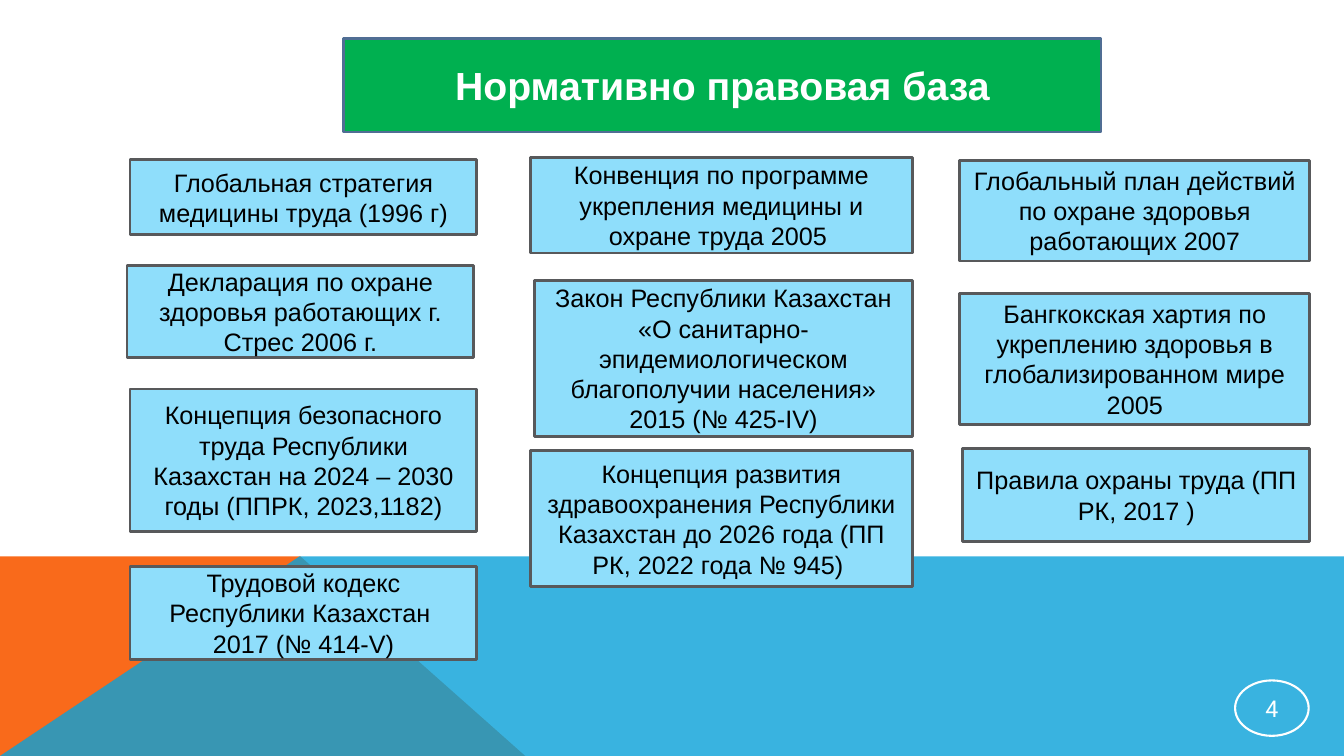
from pptx import Presentation
from pptx.dml.color import RGBColor
from pptx.enum.shapes import MSO_SHAPE
from pptx.enum.text import MSO_ANCHOR, PP_ALIGN
from pptx.oxml.ns import qn
from pptx.util import Inches, Pt
from lxml import etree

WHITE = RGBColor(0xFF, 0xFF, 0xFF)
BLACK = RGBColor(0x00, 0x00, 0x00)
ORANGE = RGBColor(0xF9, 0x6A, 0x1B)
BLUE = RGBColor(0x08, 0xA1, 0xD9)
GREEN = RGBColor(0x00, 0xB0, 0x50)
TITLE_LINE = RGBColor(0x50, 0x6E, 0x94)
PALE_BLUE = RGBColor(0x8F, 0xDE, 0xFB)
GREY = RGBColor(0x58, 0x59, 0x5B)

prs = Presentation()
prs.slide_width, prs.slide_height = Inches(13.33), Inches(7.5)
s = prs.slides.add_slide(prs.slide_layouts[6])


def add_band(points, color):
    (x, y), *rest = [(Inches(px), Inches(py)) for px, py in points]
    builder = s.shapes.build_freeform(x, y)
    builder.add_line_segments(rest, close=True)
    sp = builder.convert_to_shape()
    sp.shadow.inherit = False
    sp.fill.solid()
    sp.fill.fore_color.rgb = color
    sp.line.fill.background()
    return sp


def add_box(kind, box, lines, fill, line, width, size, color,
            font="Arial", bold=False, inset=(0.1, 0.05)):
    sp = s.shapes.add_shape(kind, *[Inches(v) for v in box])
    sp.shadow.inherit = False
    if fill is None:
        sp.fill.background()
    else:
        sp.fill.solid()
        sp.fill.fore_color.rgb = fill
    sp.line.color.rgb = line
    sp.line.width = Pt(width)
    tf = sp.text_frame
    tf.word_wrap = True
    tf.vertical_anchor = MSO_ANCHOR.MIDDLE
    tf.margin_left = tf.margin_right = Inches(inset[0])
    tf.margin_top = tf.margin_bottom = Inches(inset[1])
    tf.text = "\n".join(lines)
    for p in tf.paragraphs:
        p.alignment = PP_ALIGN.CENTER
        p.font.name, p.font.size, p.font.bold = font, Pt(size), bold
        p.font.color.rgb = color


# Bottom bands: the blue one lets the orange show through
add_band([(0, 7.5), (0, 5.52), (2.98, 5.52), (5.21, 7.5)], ORANGE)
blue = add_band([(0, 7.5), (2.97, 5.52), (13.33, 5.52), (13.33, 7.5)], BLUE)
rgb = blue._element.spPr.find(qn("a:solidFill")).find(qn("a:srgbClr"))
etree.SubElement(rgb, qn("a:alpha")).set("val", "80000")

# Title
add_box(MSO_SHAPE.RECTANGLE, (3.41, 0.38, 7.51, 0.93),
        ["Нормативно правовая база"], GREEN, TITLE_LINE, 2, 28, WHITE, bold=True)

# Documents, column by column: left, top, width, height, lines
documents = [
    (1.29, 1.58, 3.44, 0.75, ["Глобальная стратегия медицины труда (1996 г)"]),
    (1.26, 2.63, 3.44, 0.92,
     ["Декларация по охране здоровья работающих г. Стрес 2006 г."]),
    (1.29, 3.86, 3.44, 1.41,
     ["Концепция безопасного труда Республики Казахстан на 2024 – 2030 годы "
      "(ППРК, 2023,1182)"]),
    (1.29, 5.62, 3.44, 0.92,
     ["Трудовой кодекс Республики Казахстан ", "2017 (№ 414-V)"]),
    (5.26, 1.56, 3.79, 0.95,
     ["Конвенция по программе укрепления медицины и охране труда 2005 "]),
    (5.3, 2.78, 3.75, 1.55,
     ["Закон Республики Казахстан «О санитарно-эпидемиологическом "
      "благополучии населения» 2015 (№ 425-IV)"]),
    (5.26, 4.47, 3.79, 1.35,
     ["Концепция развития здравоохранения Республики Казахстан до 2026 года "
      "(ПП РК, 2022 года № 945) "]),
    (9.52, 1.59, 3.47, 1,
     ["Глобальный план действий по охране здоровья работающих 2007"]),
    (9.52, 2.91, 3.47, 1.3,
     ["Бангкокская хартия по укреплению здоровья в глобализированном мире 2005"]),
    (9.55, 4.45, 3.44, 0.92, ["Правила охраны труда (ПП РК, 2017 )"]),
]
for *box, lines in documents:
    add_box(MSO_SHAPE.RECTANGLE, box, lines, PALE_BLUE, GREY, 2, 18, BLACK)

# Slide number
add_box(MSO_SHAPE.OVAL, (12.25, 6.75, 0.73, 0.55), ["4"], None, WHITE, 1.5,
        16.5, WHITE, font="Roboto", inset=(0.01, 0.01))

prs.save("out.pptx")
